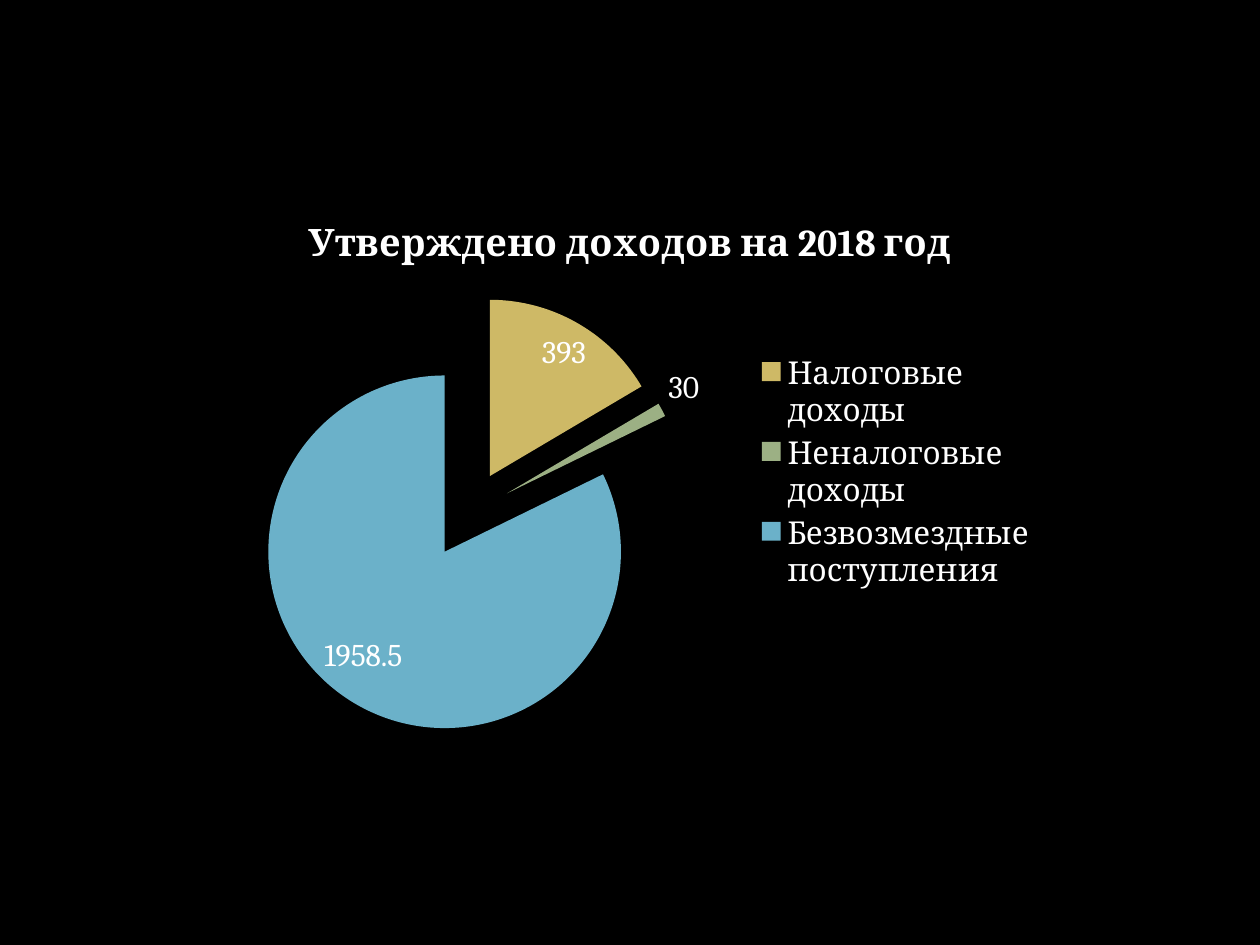
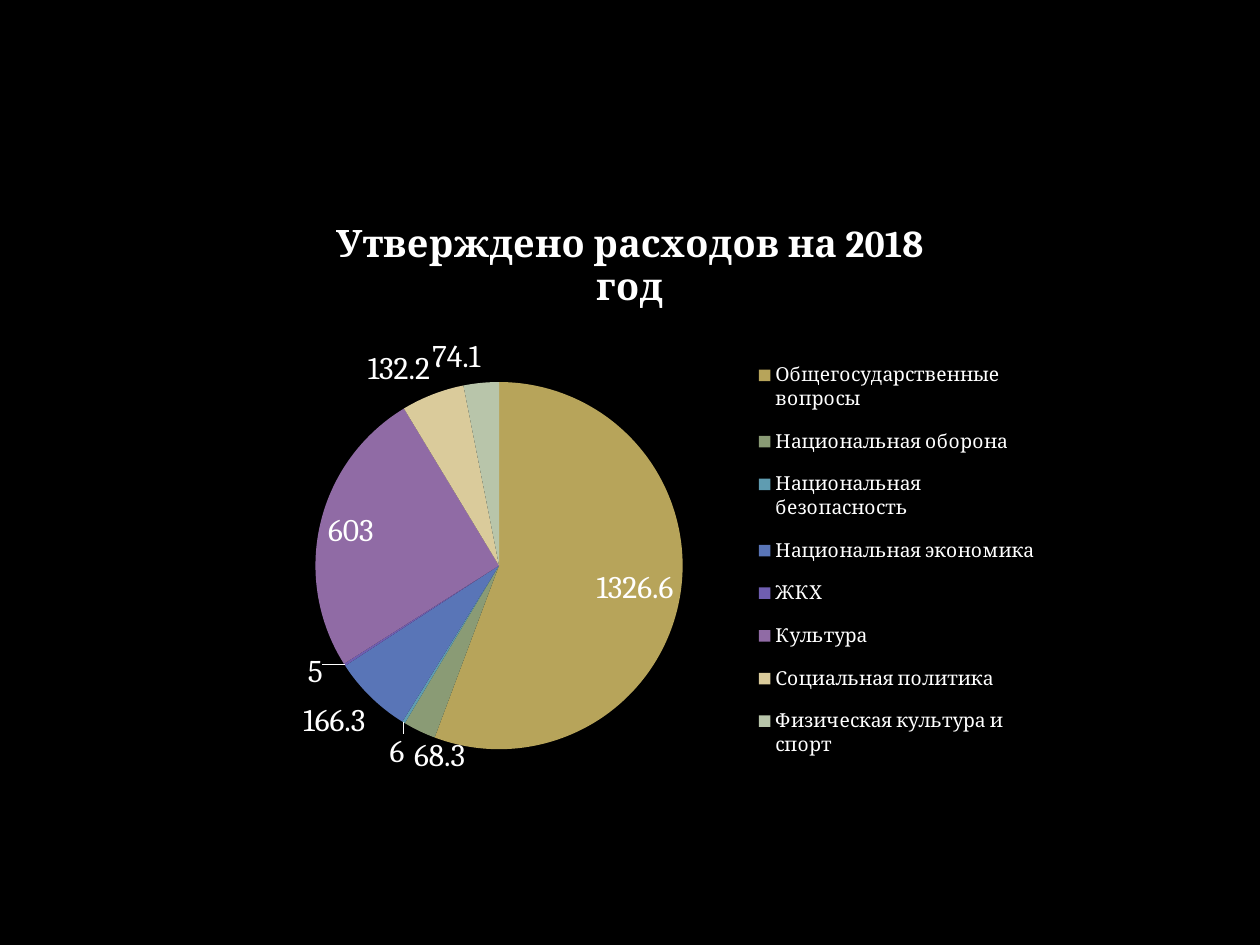
from pptx import Presentation
from pptx.chart.data import CategoryChartData
from pptx.dml.color import RGBColor
from pptx.enum.chart import XL_CHART_TYPE, XL_LABEL_POSITION, XL_LEGEND_POSITION
from pptx.oxml import parse_xml
from pptx.oxml.ns import nsdecls
from pptx.util import Inches, Pt

# Content: category, value, colour
INCOME = [
    ("Налоговые доходы", 393, "CEB966"),
    ("Неналоговые доходы", 30, "9CB084"),
    ("Безвозмездные поступления", 1958.5, "6BB1C9"),
]
SPENDING = [
    ("Общегосударственные вопросы", 1326.6, "B7A45A"),
    ("Национальная оборона", 68.3, "8A9B75"),
    ("Национальная безопасность", 6, "5F9CB1"),
    ("Национальная экономика", 166.3, "5975B7"),
    ("ЖКХ", 5, "6F5EB1"),
    ("Культура", 603, "906BA5"),
    ("Социальная политика", 132.2, "DACB9B"),
    ("Физическая культура и спорт", 74.1, "B8C5AA"),
]
# box: legend left, top, width, height as shares of the chart
SLIDES = [
    dict(title="Утверждено доходов на 2018 год", rows=INCOME,
         high=4.44, key=18, burst=25, box=None),
    dict(title="Утверждено расходов на 2018 год", rows=SPENDING,
         high=4.82, key=11, burst=0, box=(0.645, 0.25, 0.345, 0.71)),
]

# Shared style
FACE, BACK, INK = "Cambria", "000000", "FFFFFF"
PAGE, TOP = 10, 1.53
WIDE = PAGE * 2 / 3
LEFT = (PAGE - WIDE) / 2
TEXT, HEAD = 18, 21.6


def color(code):
    return RGBColor.from_string(code)


def style(font, size, bold=False):
    font.name = FACE
    font.size = Pt(size)
    font.bold = bold
    font.color.rgb = color(INK)


def place(legend, box):
    modes = '<c:xMode val="edge"/><c:yMode val="edge"/>'
    sizes = "".join(f'<c:{tag} val="{val}"/>' for tag, val in zip("xywh", box))
    part = parse_xml(
        f'<c:layout {nsdecls("c")}><c:manualLayout>{modes}{sizes}'
        '</c:manualLayout></c:layout>')
    root = legend._element
    for old in root.findall("{*}layout"):
        root.remove(old)
    root.find("{*}legendPos").addnext(part)


def add_pie(slide, title, rows, high, key, burst, box):
    names, values, fills = zip(*rows)
    data = CategoryChartData()
    data.categories = names
    data.add_series("Series 1", values)
    frame = slide.shapes.add_chart(
        XL_CHART_TYPE.PIE, Inches(LEFT), Inches(TOP),
        Inches(WIDE), Inches(high), data)
    chart = frame.chart
    style(chart.font, TEXT)

    # Title
    chart.has_title = True
    run = chart.chart_title.text_frame.paragraphs[0].add_run()
    run.text = title
    style(run.font, HEAD, True)
    chart.chart_title.include_in_layout = False

    # Legend
    chart.has_legend = True
    legend = chart.legend
    legend.position = XL_LEGEND_POSITION.RIGHT
    legend.include_in_layout = False
    style(legend.font, key)
    if box:
        place(legend, box)

    # Slices
    plot = chart.plots[0]
    plot.vary_by_categories = True
    series = plot.series[0]
    for i, code in enumerate(fills):
        fill = series.points[i].format.fill
        fill.solid()
        fill.fore_color.rgb = color(code)
    if burst:
        part = parse_xml(f'<c:explosion {nsdecls("c")} val="{burst}"/>')
        series._element.find("{*}dPt").addprevious(part)

    # Value labels
    labels = series.data_labels
    labels.show_value = True
    labels.position = XL_LABEL_POSITION.BEST_FIT
    style(labels.font, TEXT)


def main():
    deck = Presentation()
    deck.slide_width, deck.slide_height = Inches(PAGE), Inches(7.5)
    for item in SLIDES:
        slide = deck.slides.add_slide(deck.slide_layouts[6])
        fill = slide.background.fill
        fill.solid()
        fill.fore_color.rgb = color(BACK)
        add_pie(slide, **item)
    deck.save("out.pptx")


if __name__ == "__main__":
    main()
